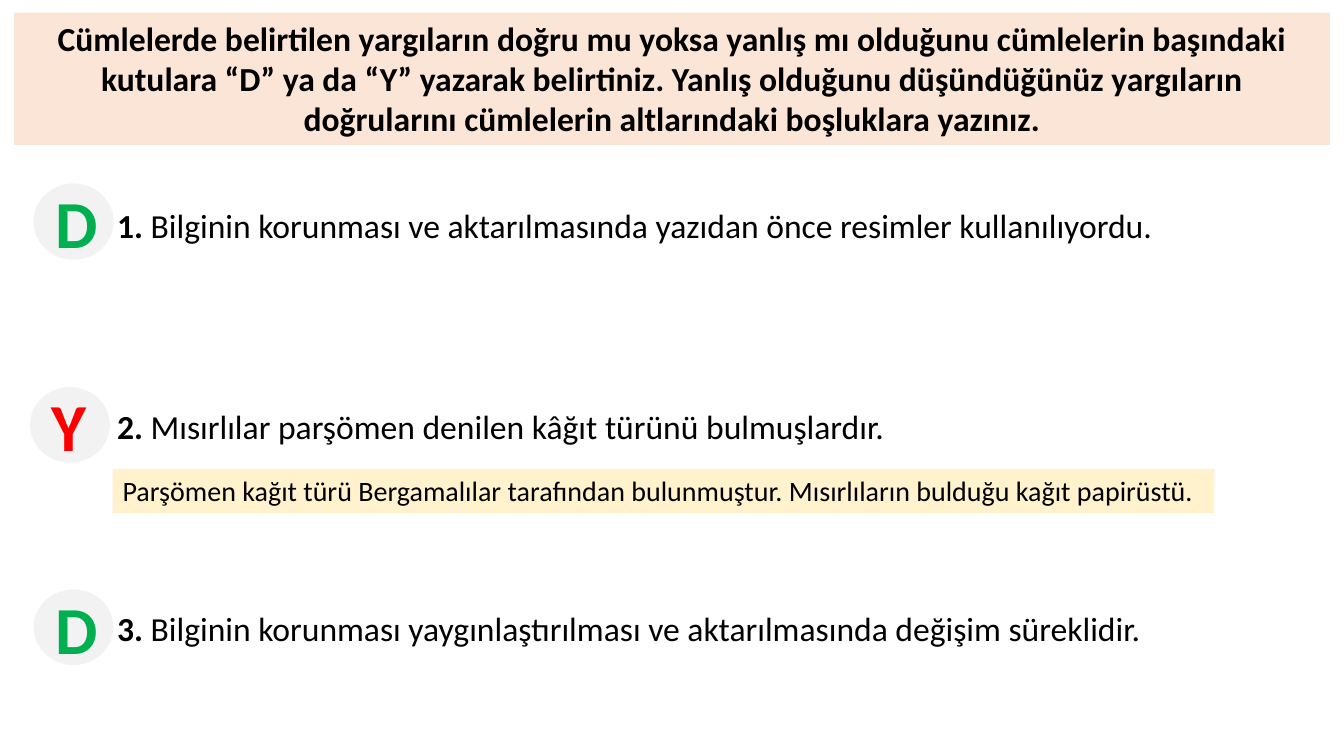
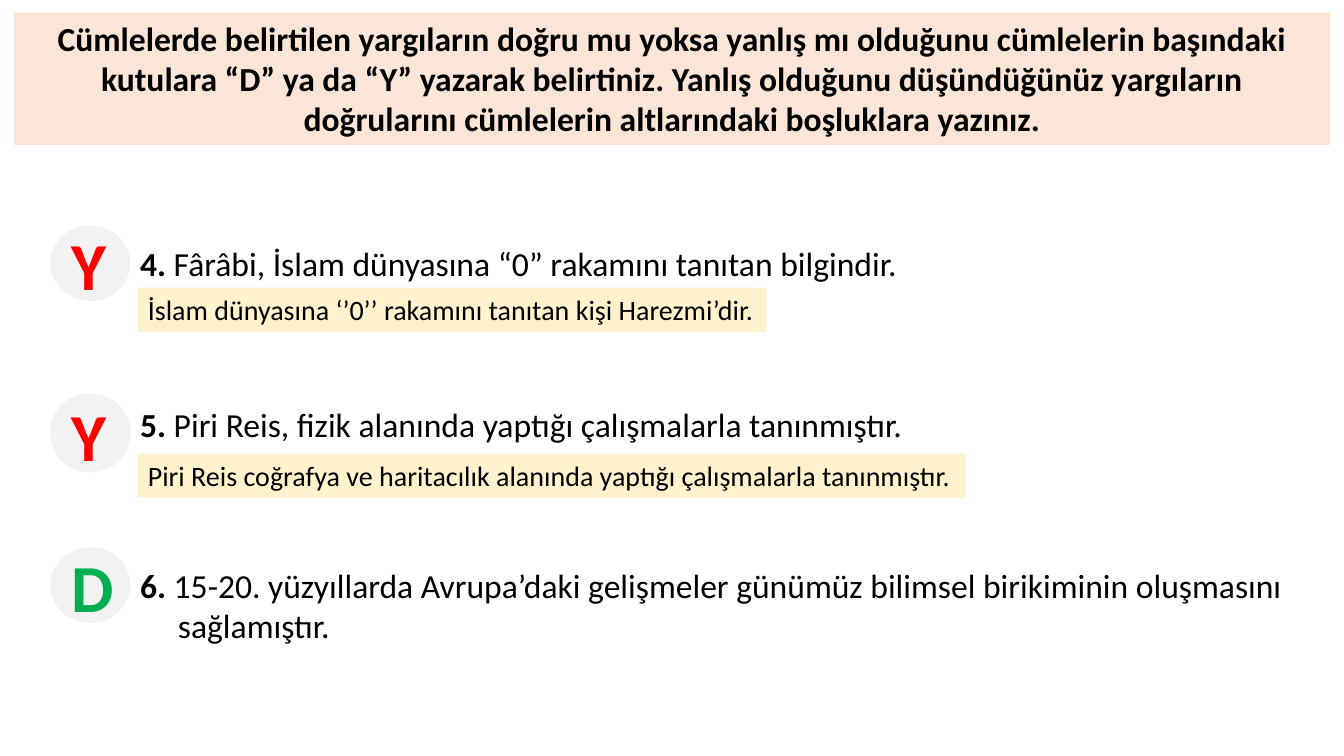
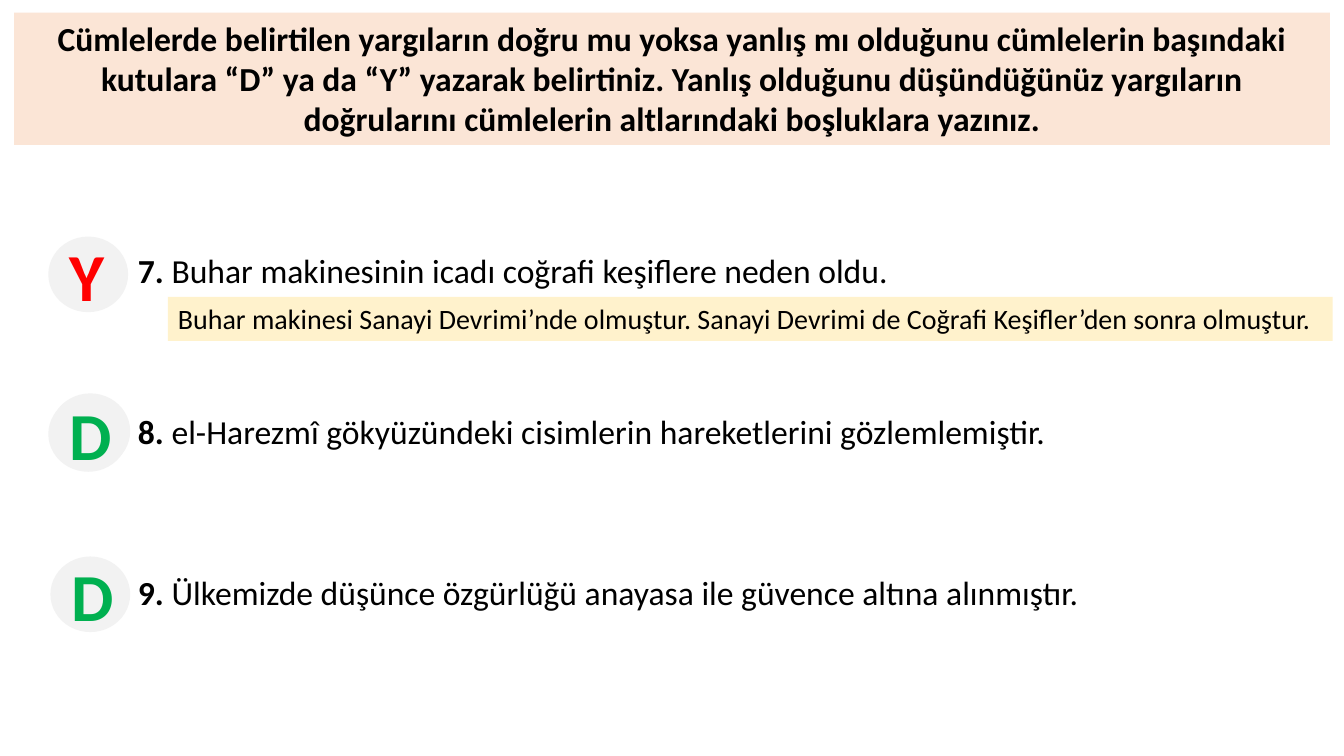
"""Build three true-or-false exercise slides with answers and corrections."""
from dataclasses import dataclass

from pptx import Presentation
from pptx.dml.color import RGBColor
from pptx.enum import shapes, text
from pptx.util import Pt

INSTRUCTION = (
    "Cümlelerde belirtilen yargıların doğru mu yoksa yanlış mı olduğunu cümlelerin başındaki\n"
    "kutulara “D” ya da “Y” yazarak belirtiniz. Yanlış olduğunu düşündüğünüz yargıların "
    "doğrularını cümlelerin altlarındaki boşluklara yazınız."
)

EXERCISES = [
    {
        "origin": (76.5, 142.5), "pitch": 144,
        "statements": [
            ("Bilginin korunması ve aktarılmasında yazıdan önce resimler kullanılıyordu.",
             "D", [(24, 131.5), (24, 131)]),
            ("Mısırlılar parşömen denilen kâğıt türünü bulmuşlardır.", "Y", [(21.5, 276.5)]),
            ("Bilginin korunması yaygınlaştırılması ve aktarılmasında değişim süreklidir.",
             "D", [(24, 421)]),
        ],
        "corrections": [
            ("Parşömen kağıt türü Bergamalılar tarafından bulunmuştur. "
             "Mısırlıların bulduğu kağıt papirüstü.", (80.5, 335), 787),
        ],
    },
    {
        "origin": (93, 170), "pitch": 115,
        "statements": [
            ("Fârâbi, İslam dünyasına “0” rakamını tanıtan bilgindir.", "Y", [(36, 161)]),
            ("Piri Reis, fizik alanında yaptığı çalışmalarla tanınmıştır.",
             "Y", [(36, 281), (36, 283.5)]),
            ("15-20. yüzyıllarda Avrupa’daki gelişmeler günümüz bilimsel birikiminin "
             "oluşmasını sağlamıştır.", "D", [(36, 391)]),
        ],
        "corrections": [
            ("İslam dünyasına ‘’0’’ rakamını tanıtan kişi Harezmi’dir.", (98.5, 205.5), 449),
            ("Piri Reis coğrafya ve haritacılık alanında yaptığı çalışmalarla tanınmıştır.",
             (98.5, 324), 591),
        ],
    },
    {
        "origin": (91.5, 175), "pitch": 115,
        "statements": [
            ("Buhar makinesinin icadı coğrafi keşiflere neden oldu.", "Y", [(34.5, 169)]),
            ("el-Harezmî gökyüzündeki cisimlerin hareketlerini gözlemlemiştir.",
             "D", [(36, 281), (34.5, 283)]),
            ("Ülkemizde düşünce özgürlüğü anayasa ile güvence altına alınmıştır.",
             "D", [(36, 397.5)]),
        ],
        "corrections": [
            ("Buhar makinesi Sanayi Devrimi’nde olmuştur. Sanayi Devrimi de Coğrafi "
             "Keşifler’den sonra olmuştur.", (120, 212), 832),
        ],
    },
]


@dataclass(frozen=True)
class Theme:
    font: str = "Calibri"
    ink: str = "000000"
    band: str = "FBE5D6"
    badge: str = "F2F2F2"
    correction: str = "FFF2CC"
    true: str = "00B050"
    false: str = "FF0000"
    body_size: int = 24
    correction_size: int = 20
    badge_size: int = 48


THEME = Theme()
VERDICT_COLOURS = {"D": THEME.true, "Y": THEME.false}
SLIDE_SIZE = (960, 540)
BAND = (10, 9, 940, 94.5)
BADGE_SIZE = (57, 54)
CORRECTION_HEIGHT = 31.5
STATEMENT_RIGHT = 950
STATEMENT_HEIGHT = 36
HANGING = 27


def points(*lengths):
    return [Pt(length) for length in lengths]


def paint(part, colour):
    part.fill.solid()
    part.fill.fore_color.rgb = RGBColor.from_string(colour)


def style(run, size, colour=THEME.ink, bold=False):
    run.font.name = THEME.font
    run.font.size = Pt(size)
    run.font.bold = bold
    run.font.color.rgb = RGBColor.from_string(colour)


def add_panel(slide, preset, box, colour):
    panel = slide.shapes.add_shape(preset, *points(*box))
    panel.shadow.inherit = False
    panel.line.fill.background()
    paint(panel, colour)
    return panel


def set_instruction(slide):
    band = slide.shapes.title
    band.left, band.top, band.width, band.height = points(*BAND)
    paint(band, THEME.band)
    frame = band.text_frame
    frame.text = INSTRUCTION
    frame.auto_size = text.MSO_AUTO_SIZE.NONE
    frame.vertical_anchor = text.MSO_ANCHOR.TOP
    for paragraph in frame.paragraphs:
        paragraph.alignment = text.PP_ALIGN.CENTER
        for run in paragraph.runs:
            style(run, THEME.body_size, bold=True)


def add_statement(slide, number, wording, left, top):
    statement = slide.shapes.add_textbox(
        *points(left, top, STATEMENT_RIGHT - left, STATEMENT_HEIGHT))
    statement.text_frame.word_wrap = True
    paragraph = statement.text_frame.paragraphs[0]
    indents = paragraph._p.get_or_add_pPr()
    indents.set("marL", str(Pt(HANGING)))
    indents.set("indent", str(-Pt(HANGING)))
    for part, bold in ((f"{number}. ", True), (wording, False)):
        run = paragraph.add_run()
        run.text = part
        style(run, THEME.body_size, bold=bold)


def add_verdict(slide, verdict, places):
    for place in places:
        badge = add_panel(slide, shapes.MSO_SHAPE.OVAL, (*place, *BADGE_SIZE), THEME.badge)
    badge.text_frame.text = verdict
    style(badge.text_frame.paragraphs[0].runs[0], THEME.badge_size,
          VERDICT_COLOURS[verdict], True)


def add_correction(slide, wording, place, width):
    box = (*place, width, CORRECTION_HEIGHT)
    correction = add_panel(slide, shapes.MSO_SHAPE.RECTANGLE, box, THEME.correction)
    frame = correction.text_frame
    frame.text = wording
    frame.word_wrap = True
    frame.vertical_anchor = text.MSO_ANCHOR.TOP
    frame.paragraphs[0].alignment = text.PP_ALIGN.LEFT
    style(frame.paragraphs[0].runs[0], THEME.correction_size)


def main():
    deck = Presentation()
    deck.slide_width, deck.slide_height = points(*SLIDE_SIZE)
    number = 0
    for exercise in EXERCISES:
        slide = deck.slides.add_slide(deck.slide_layouts[5])
        set_instruction(slide)
        left, top = exercise["origin"]
        for row, (wording, verdict, places) in enumerate(exercise["statements"]):
            number += 1
            add_statement(slide, number, wording, left, top + row * exercise["pitch"])
            add_verdict(slide, verdict, places)
        for correction in exercise["corrections"]:
            add_correction(slide, *correction)
    deck.save("out.pptx")


if __name__ == "__main__":
    main()
